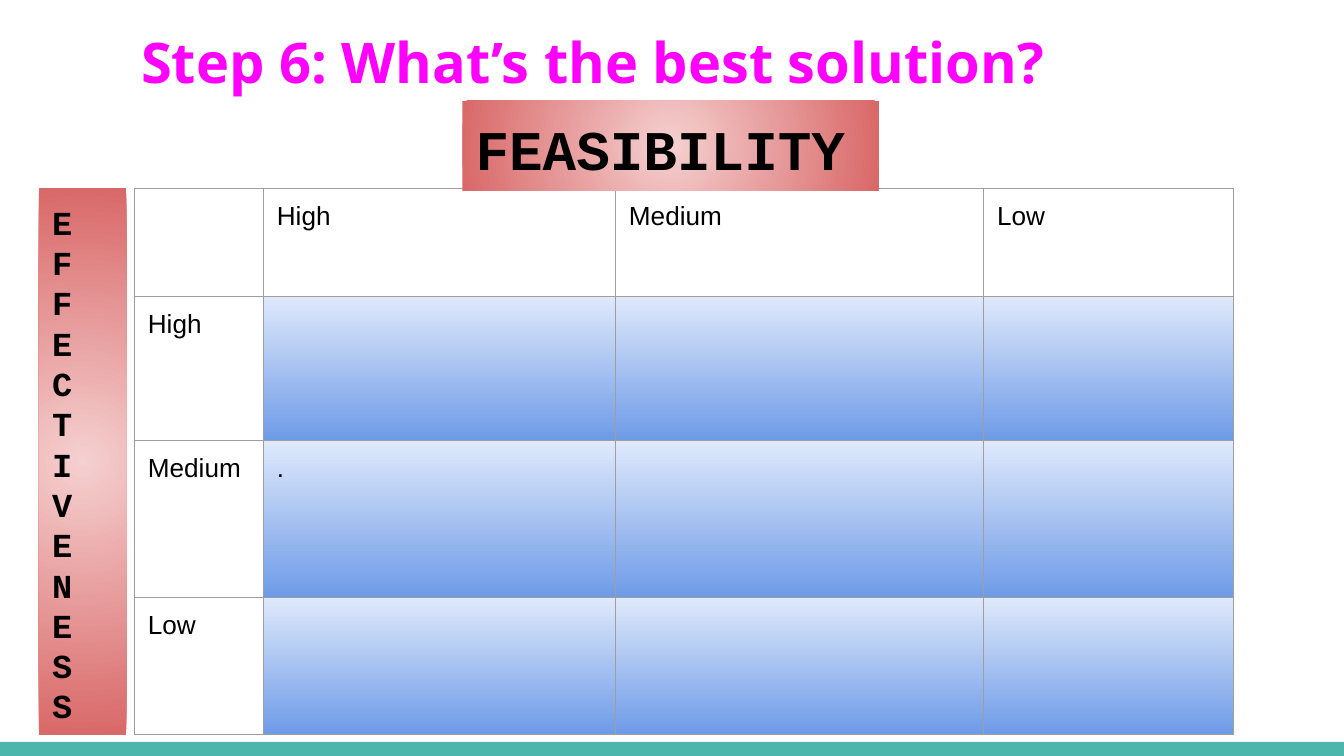
"""Build the feasibility and effectiveness decision grid slide."""
from dataclasses import dataclass
from typing import Any

from lxml import etree
from pptx import Presentation, util as u
from pptx.dml.color import RGBColor
from pptx.enum import shapes, text
from pptx.oxml import ns

EMU_PER_PX = 4572
COLORS = {
    "teal": "4DB6AC", "white": "FFFFFF", "black": "000000",
    "magenta": "FF00FF", "border": "9E9E9E",
    "blue_light": "DFE9FB", "blue_dark": "6E9BE7",
    "red_light": "F5D0D0", "red_dark": "D96868",
}
LEVELS = ["High", "Medium", "Low"]
COLUMN_WIDTHS = [192, 524, 548, 372]
ROW_HEIGHTS = [161, 215, 233, 204]
INSET = 20


@dataclass
class AxisBanner:
    lines: list[str]
    box: tuple[int, int, int, int]
    size: int
    align: Any


BANNERS = [
    AxisBanner(list("EFFECTIVENESS"), (58, 280, 130, 814), 18, text.PP_ALIGN.LEFT),
    AxisBanner(["FEASIBILITY"], (688, 150, 620, 134), 30, text.PP_ALIGN.JUSTIFY),
]


def px(length: int) -> int:
    return u.Emu(length * EMU_PER_PX)


def rgb(name: str) -> RGBColor:
    return RGBColor.from_string(COLORS[name])


def set_margins(holder: Any) -> None:
    holder.margin_left = holder.margin_right = px(INSET)
    holder.margin_top = holder.margin_bottom = px(INSET)


def write(frame: Any, lines: list[str], *, size: int, font: str, color: str = "black",
          bold: bool = False, align: Any = text.PP_ALIGN.LEFT) -> None:
    for index, line in enumerate(lines):
        paragraph = frame.add_paragraph() if index else frame.paragraphs[0]
        paragraph.alignment = align
        run = paragraph.add_run()
        run.text = line
        run.font.name, run.font.size, run.font.bold = font, u.Pt(size), bold
        run.font.color.rgb = rgb(color)


def prepare_frame(frame: Any) -> None:
    frame.word_wrap = True
    frame.vertical_anchor = text.MSO_ANCHOR.TOP
    set_margins(frame)


def fill_gradient(fill: Any, start: str, end: str) -> None:
    fill.gradient()
    fill.gradient_angle = 270
    for stop, name, position in zip(fill.gradient_stops, (start, end), (0, 1)):
        stop.color.rgb = rgb(name)
        stop.position = position


def make_radial(shape: Any) -> None:
    for linear in list(shape._element.iter(ns.qn("a:lin"))):
        gradient = linear.getparent()
        gradient.remove(linear)
        circle = etree.SubElement(gradient, ns.qn("a:path"), path="circle")
        etree.SubElement(circle, ns.qn("a:fillToRect"), l="50000", t="50000", r="50000", b="50000")


def add_rectangle(slide: Any, box: tuple[int, int, int, int]) -> Any:
    rectangle = slide.shapes.add_shape(shapes.MSO_SHAPE.RECTANGLE, *map(px, box))
    rectangle.shadow.inherit = False
    rectangle.line.fill.background()
    return rectangle


def add_banner(slide: Any, banner: AxisBanner) -> None:
    shape = add_rectangle(slide, banner.box)
    fill_gradient(shape.fill, "red_light", "red_dark")
    make_radial(shape)
    prepare_frame(shape.text_frame)
    write(shape.text_frame, banner.lines, size=banner.size, font="Courier New", bold=True,
          align=banner.align)


def add_borders(cell: Any) -> None:
    properties = cell._tc.get_or_add_tcPr()
    for side in ("lnL", "lnR", "lnT", "lnB"):
        line = etree.SubElement(properties, ns.qn(f"a:{side}"), w=str(u.Pt(0.75)))
        solid = etree.SubElement(line, ns.qn("a:solidFill"))
        etree.SubElement(solid, ns.qn("a:srgbClr"), val=COLORS["border"])


def add_grid(slide: Any) -> None:
    rows = [["", *LEVELS]] + [[level, "", "", ""] for level in LEVELS]
    rows[2][1] = "."
    grid = slide.shapes.add_table(len(rows), len(rows[0]), px(200), px(280),
                                  px(sum(COLUMN_WIDTHS)), px(sum(ROW_HEIGHTS))).table
    grid.first_row = grid.horz_banding = False
    for column, width in zip(grid.columns, COLUMN_WIDTHS):
        column.width = px(width)
    for row, height in zip(grid.rows, ROW_HEIGHTS):
        row.height = px(height)
    for r, row_labels in enumerate(rows):
        for c, label in enumerate(row_labels):
            cell = grid.cell(r, c)
            add_borders(cell)
            if r and c:
                fill_gradient(cell.fill, "blue_light", "blue_dark")
            else:
                cell.fill.solid()
                cell.fill.fore_color.rgb = rgb("white")
            set_margins(cell)
            if label:
                write(cell.text_frame, [label], size=14, font="Arial")


def add_title(slide: Any) -> None:
    title = slide.shapes.title
    title.left, title.top, title.width, title.height = map(px, (190, 21, 1506, 134))
    title.text_frame.auto_size = text.MSO_AUTO_SIZE.NONE
    prepare_frame(title.text_frame)
    write(title.text_frame, ["Step 6: What’s the best solution?"], size=30,
          font="Open Sans", color="magenta", bold=True)


def main() -> None:
    deck = Presentation()
    deck.slide_width, deck.slide_height = px(2000), px(1125)
    slide = deck.slides.add_slide(deck.slide_layouts[5])
    footer_bar = add_rectangle(slide, (0, 1104, 2000, 21))
    footer_bar.fill.solid()
    footer_bar.fill.fore_color.rgb = rgb("teal")
    add_grid(slide)
    for banner in BANNERS:
        add_banner(slide, banner)
    add_title(slide)
    deck.save("out.pptx")


if __name__ == "__main__":
    main()
